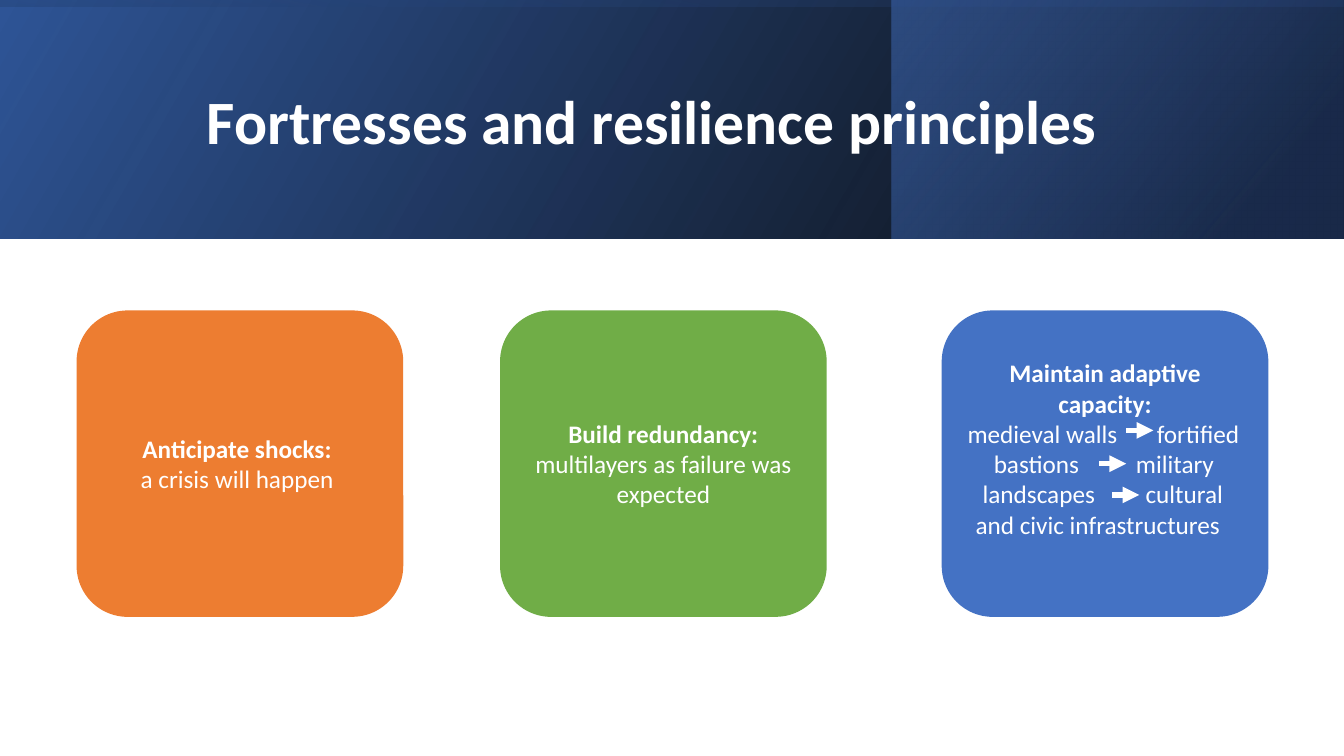
from lxml import etree
from pptx import Presentation
from pptx.dml.color import RGBColor
from pptx.enum import shapes, text
from pptx.oxml.ns import qn
from pptx.util import Inches, Pt

THEME = {
    "font": "Calibri", "white": "FFFFFF", "title": 44, "body": 18,
    "orange": "ED7D31", "green": "70AD47", "blue": "4472C4",
    "navy": "2F5597", "deep": "203864", "black": "000000",
}

TITLE = "Fortresses and resilience principles "
# place, rotation, gradient angle, stops of (position, colour, opacity)
BANDS = [
    ((0, 0, 13.33, 2.37), 0, 330, [(0, "black", 96), (100, "navy", 100)]),
    ((8.84, 0, 4.48, 2.37), 0, 320, [(19, "deep", 68), (100, "blue", 48)]),
    ((5.48, -5.48, 2.37, 13.33), 270, 350, [(23, "navy", 16), (99, "black", 45)]),
]
# left, colour, heading, centred body lines
CARDS = [
    (0.76, "orange", "Anticipate shocks: ", ["a crisis will happen "]),
    (4.96, "green", "Build redundancy:", ["multilayers as failure was expected"]),
    (9.34, "blue", "Maintain adaptive capacity:", []),
]
CARD_TOP, CARD_WIDTH, CARD_HEIGHT = 3.08, 3.24, 3.04
# indent, words before the arrow, words after it, points added to the space between
STAGES = [
    (0.01, "medieval walls", "fortified", 24),
    (0.27, "bastions", "military", 36.5),
    (0.16, "landscapes", "cultural", 32),
    (0.09, "and civic infrastructures", "", 0),
]
STAGE_BOTTOM_INSET = 0.35
ARROWS = [(11.17, 4.27), (10.9, 4.6), (11.03, 4.91)]
ARROW_LENGTH, ARROW_WEIGHT = 0.27, 4


def colour(name):
    return RGBColor.from_string(THEME[name])


def child(parent, tag, **attributes):
    element = etree.SubElement(parent, qn(tag))
    for key, value in attributes.items():
        element.set(key, str(value))
    return element


def add_plain_shape(page, kind, place):
    shape = page.shapes.add_shape(kind, *map(Inches, place))
    shape.shadow.inherit = False
    shape.line.fill.background()
    return shape


def add_band(page, place, rotation, angle, stops):
    """Add a mirrored rectangle with a translucent gradient."""
    band = add_plain_shape(page, shapes.MSO_SHAPE.RECTANGLE, place)
    band.rotation = rotation
    band.fill.gradient()
    properties = band._element.spPr
    properties.find(qn("a:xfrm")).set("flipH", "1")
    gradient = properties.find(qn("a:gradFill"))
    for part in list(gradient):
        gradient.remove(part)
    stop_list = child(gradient, "a:gsLst")
    for position, name, opacity in stops:
        stop = child(stop_list, "a:gs", pos=position * 1000)
        tint = child(stop, "a:srgbClr", val=THEME[name])
        if opacity < 100:
            child(tint, "a:alpha", val=opacity * 1000)
    child(gradient, "a:lin", ang=angle * 60000, scaled=0)


def write(para, words, size, bold=False, align=text.PP_ALIGN.CENTER):
    para.alignment = align
    span = para.add_run()
    span.text = words
    span.font.name = THEME["font"]
    span.font.size = Pt(THEME[size])
    span.font.bold = bold
    span.font.color.rgb = colour("white")
    return span


def add_card(page, left, fill, heading, lines):
    place = (left, CARD_TOP, CARD_WIDTH, CARD_HEIGHT)
    card = add_plain_shape(page, shapes.MSO_SHAPE.ROUNDED_RECTANGLE, place)
    card.fill.solid()
    card.fill.fore_color.rgb = colour(fill)
    frame = card.text_frame
    frame.word_wrap = True
    frame.vertical_anchor = text.MSO_ANCHOR.MIDDLE
    write(frame.paragraphs[0], heading, "body", bold=True)
    for line in lines:
        write(frame.add_paragraph(), line, "body")
    return frame


def add_stages(frame):
    """Write the lines whose middle space is widened to hold an arrow."""
    frame.margin_bottom = Inches(STAGE_BOTTOM_INSET)
    left = text.PP_ALIGN.LEFT
    for indent, before, after, gap in STAGES:
        para = frame.add_paragraph()
        layout = para._p.get_or_add_pPr()
        layout.set("marL", str(Inches(indent)))
        layout.set("indent", "0")
        write(para, before, "body", align=left)
        if after:
            space = write(para, " ", "body", align=left)
            space._r.get_or_add_rPr().set("spc", str(int(gap * 100)))
            write(para, after, "body", align=left)


def add_arrow(page, left, level):
    arrow = page.shapes.add_connector(
        shapes.MSO_CONNECTOR.STRAIGHT, Inches(left), Inches(level),
        Inches(left + ARROW_LENGTH), Inches(level))
    arrow.line.color.rgb = colour("white")
    arrow.line.width = Pt(ARROW_WEIGHT)
    child(arrow.line._get_or_add_ln(), "a:tailEnd", type="triangle")
    child(arrow._element.spPr, "a:effectLst")


def main():
    deck = Presentation()
    deck.slide_width, deck.slide_height = Inches(13.33), Inches(7.5)
    page = deck.slides.add_slide(deck.slide_layouts[6])
    for band in BANDS:
        add_band(page, *band)

    box = page.shapes.add_textbox(*map(Inches, (0.93, 0.38, 11.22, 1.72)))
    box.text_frame.word_wrap = True
    box.text_frame.vertical_anchor = text.MSO_ANCHOR.MIDDLE
    heading = box.text_frame.paragraphs[0]
    heading.line_spacing = 0.9
    write(heading, TITLE, "title", bold=True)

    frames = [add_card(page, *card) for card in CARDS]
    add_stages(frames[-1])
    for arrow in ARROWS:
        add_arrow(page, *arrow)
    deck.save("out.pptx")


if __name__ == "__main__":
    main()
